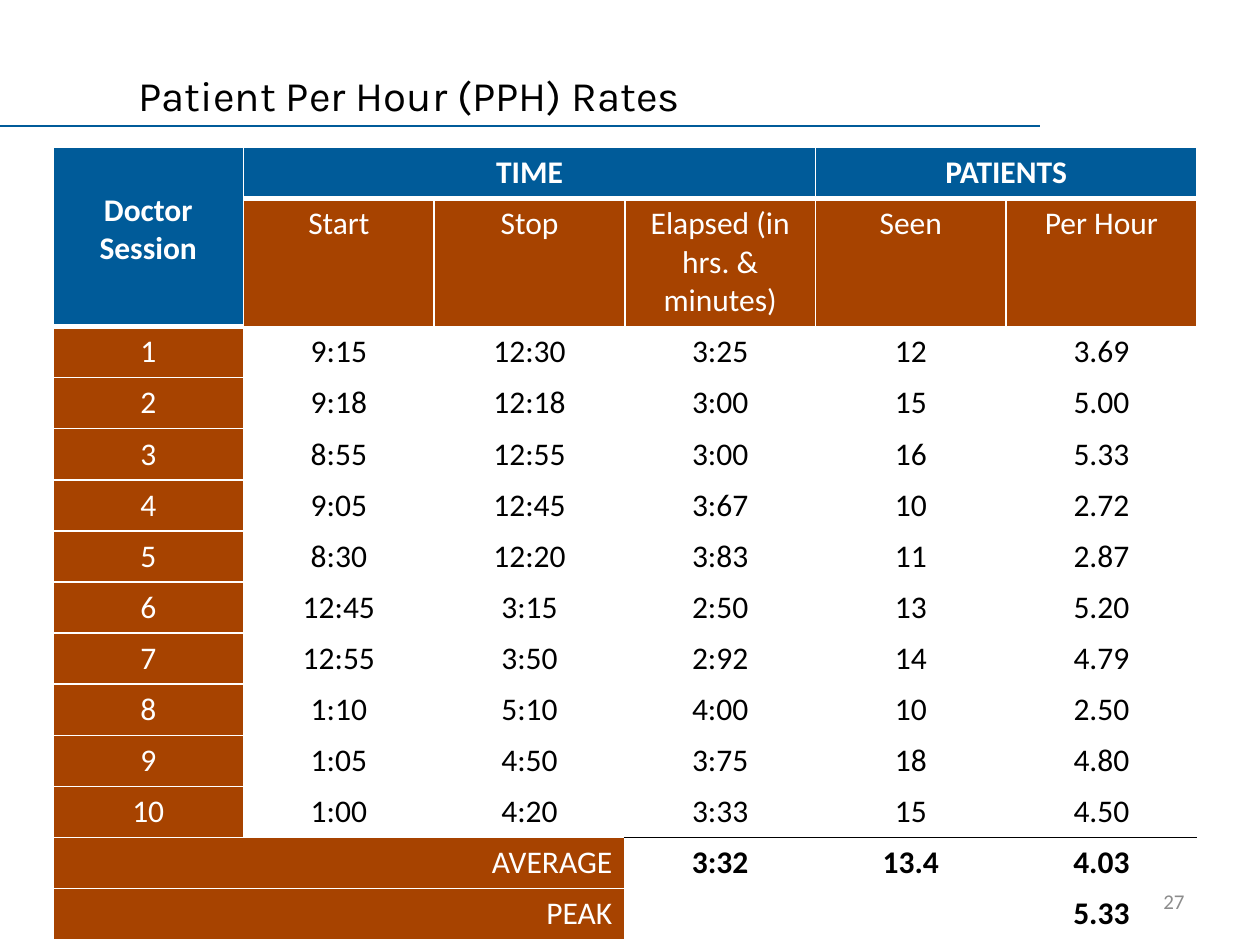
from pptx import Presentation
from pptx.dml.color import RGBColor
from pptx.enum.shapes import MSO_CONNECTOR
from pptx.enum.text import MSO_ANCHOR, PP_ALIGN
from pptx.oxml.ns import qn
from pptx.util import Inches, Pt
from lxml import etree

LEFT, MID, RIGHT = PP_ALIGN.LEFT, PP_ALIGN.CENTER, PP_ALIGN.RIGHT
MIDDLE, TOP = MSO_ANCHOR.MIDDLE, MSO_ANCHOR.TOP
BLUE, RUST, WHITE, BLACK, GREY = "005B99", "A74300", "FFFFFF", "000000", "8C8C8C"

# Content
TITLE = "Patient Per Hour (PPH) Rates"
PAGE = "27"
GROUPS = ["Doctor Session", "TIME", "", "", "PATIENTS", ""]
HEADS = ["", "Start", "Stop", "Elapsed (in hrs. & minutes)", "Seen", "Per Hour"]
VISITS = [
    ("9:15", "12:30", "3:25", "12", "3.69"),
    ("9:18", "12:18", "3:00", "15", "5.00"),
    ("8:55", "12:55", "3:00", "16", "5.33"),
    ("9:05", "12:45", "3:67", "10", "2.72"),
    ("8:30", "12:20", "3:83", "11", "2.87"),
    ("12:45", "3:15", "2:50", "13", "5.20"),
    ("12:55", "3:50", "2:92", "14", "4.79"),
    ("1:10", "5:10", "4:00", "10", "2.50"),
    ("1:05", "4:50", "3:75", "18", "4.80"),
    ("1:00", "4:20", "3:33", "15", "4.50"),
]
TOTALS = [
    ["AVERAGE", "", "", "3:32", "13.4", "4.03"],
    ["PEAK", "", "", "", "", "5.33"],
]
SESSIONS = [[str(n), *visit] for n, visit in enumerate(VISITS, 1)]
ROWS = [GROUPS, HEADS, *SESSIONS, *TOTALS]
COLS = len(HEADS)
AVG = len(ROWS) - len(TOTALS)
# Merged blocks: first row, first column, last row, last column
SPANS = [(0, 0, 1, 0), (0, 1, 0, 3), (0, 4, 0, 5),
         (AVG, 0, AVG, 2), (AVG + 1, 0, AVG + 1, 2)]


def color(code):
    return RGBColor.from_string(code)


def write(frame, text, align, tint, **form):
    para = frame.paragraphs[0]
    para.text = text
    para.alignment = align
    para.font.color.rgb = color(tint)
    for name, value in form.items():
        setattr(para.font, name, value)
        for run in para.runs:
            setattr(run.font, name, value)
    for run in para.runs:
        run.font.color.rgb = color(tint)


def edge(cell, sides):
    """Put borders before the cell fill, in schema order."""
    props = cell._tc.get_or_add_tcPr()
    for spot, (side, (tint, width)) in enumerate(sides.items()):
        line = etree.Element(qn("a:ln" + side), w=str(Pt(width)))
        fill = etree.SubElement(line, qn("a:solidFill"))
        etree.SubElement(fill, qn("a:srgbClr"), val=tint)
        props.insert(spot, line)


def look(row, col):
    """Fill, text colour, bold and alignment of a cell."""
    if row == 0 or (row == 1 and col == 0):
        return BLUE, WHITE, True, MID
    if row == 1:
        return RUST, WHITE, False, MID
    if row >= AVG:
        return (RUST, WHITE, False, RIGHT) if col < 3 else (WHITE, BLACK, True, MID)
    return (RUST, WHITE, False, MID) if col == 0 else (WHITE, BLACK, False, MID)


deck = Presentation()
deck.slide_width, deck.slide_height = Inches(10), Inches(7.5)
slide = deck.slides.add_slide(deck.slide_layouts[5])

# Title and rule
title = slide.shapes.title
title.left, title.top = Inches(1), Inches(0.5)
title.width, title.height = Inches(7), Inches(0.5)
title.text_frame.vertical_anchor = MIDDLE
write(title.text_frame, TITLE, LEFT, BLACK, name="Karla", size=Pt(24))

rule = slide.shapes.add_connector(
    MSO_CONNECTOR.STRAIGHT, 0, Inches(1), Inches(8.25), Inches(1))
rule.line.color.rgb = color(BLUE)
rule.line.width = Pt(0.75)
etree.SubElement(rule._element.spPr, qn("a:effectLst"))

# Table
table = slide.shapes.add_table(
    len(ROWS), COLS, Inches(0.42), Inches(1.17), Inches(9.08), Inches(6.2)).table
table.first_row = table.horz_banding = False
for row, line in enumerate(ROWS):
    table.rows[row].height = Inches(0.97 if row == 1 else 0.39)
    for col, text in enumerate(line):
        cell = table.cell(row, col)
        fill, tint, bold, align = look(row, col)
        cell.fill.solid()
        cell.fill.fore_color.rgb = color(fill)
        cell.vertical_anchor = TOP
        write(cell.text_frame, text, align, tint,
              name="Calibri", size=Pt(18), bold=bold)
        sides = {side: (WHITE, 1) for side in "LRTB"}
        if fill == BLUE:
            sides["B"] = (WHITE, 3)
        if col >= 3 and row in (AVG - 1, AVG):
            sides["B" if row < AVG else "T"] = (BLACK, 1)
        edge(cell, sides)
for top, left, last, end in SPANS:
    table.cell(top, left).merge(table.cell(last, end))
table.cell(0, 0).margin_top = Inches(0.35)

# Page number
page = slide.shapes.add_textbox(
    Inches(7.17), Inches(6.95), Inches(2.33), Inches(0.4)).text_frame
page.word_wrap = True
page.vertical_anchor = MIDDLE
write(page, PAGE, RIGHT, GREY, name="Calibri", size=Pt(12))

deck.save("out.pptx")
